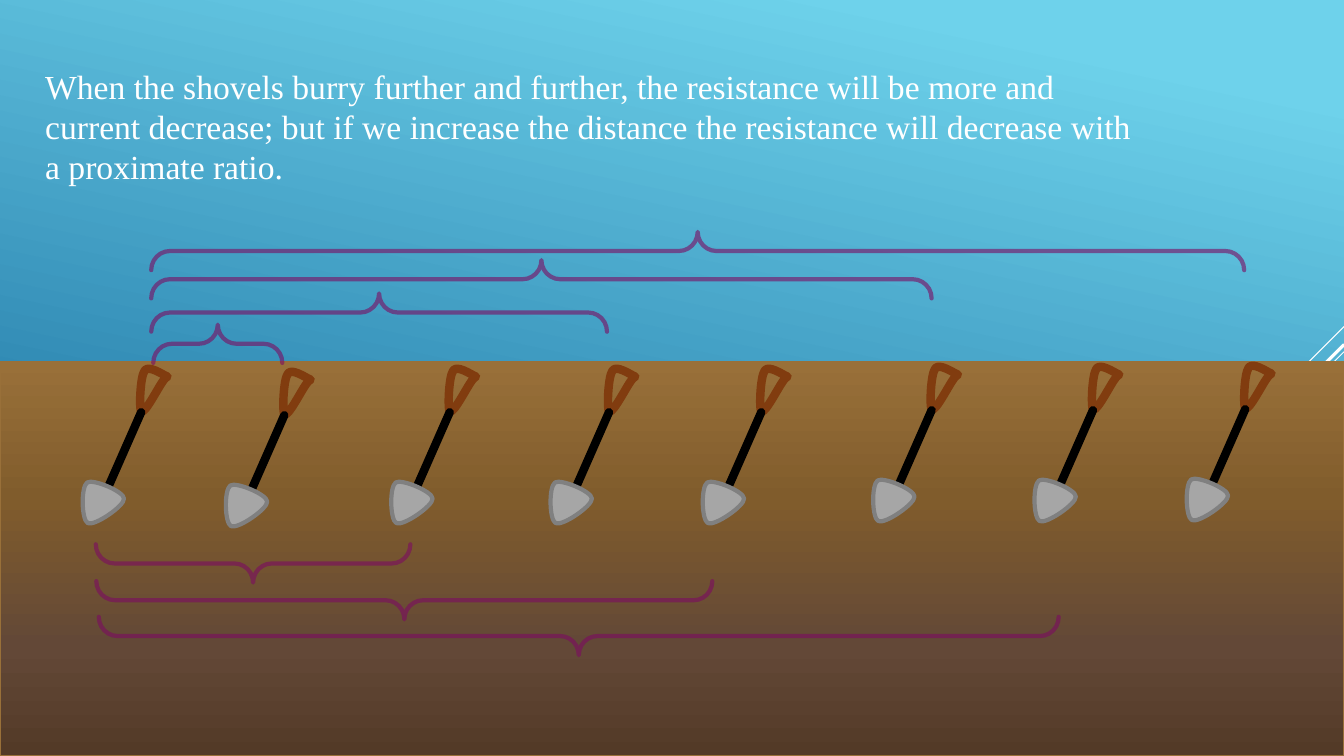
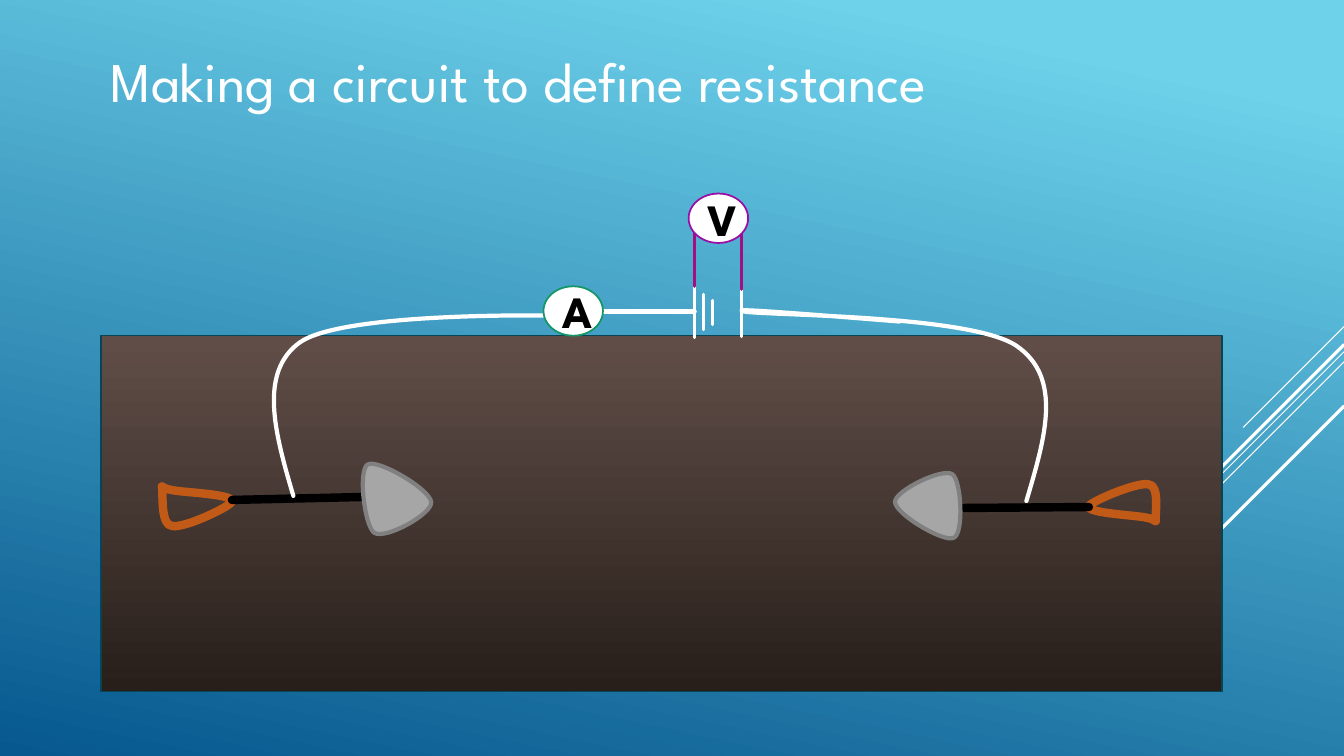
from copy import deepcopy
from dataclasses import dataclass
from itertools import chain

from lxml.etree import SubElement
from pptx import Presentation
from pptx.dml.color import RGBColor
from pptx.enum.shapes import MSO_CONNECTOR as Connector, MSO_SHAPE as Preset
from pptx.enum.text import MSO_ANCHOR as Anchor, PP_ALIGN as Align
from pptx.oxml.ns import qn
from pptx.util import Pt

PX = 9144

WHITE = RGBColor(0xFF, 0xFF, 0xFF)
BLACK = RGBColor(0x00, 0x00, 0x00)
SKY_LIGHT = RGBColor(0x6E, 0xD2, 0xEB)
SKY_DARK = RGBColor(0x06, 0x58, 0x8E)
SOIL_DEEP = RGBColor(0x53, 0x3A, 0x27)
SOIL_LOW = RGBColor(0x63, 0x48, 0x37)
SOIL_MIDDLE = RGBColor(0x80, 0x5C, 0x2C)
SOIL_TOP = RGBColor(0x99, 0x70, 0x39)
TANK_DEEP = RGBColor(0x28, 0x1F, 0x1A)
TANK_TOP = RGBColor(0x60, 0x4D, 0x48)
TANK_EDGE = RGBColor(0x07, 0x44, 0x54)
HANDLE_DARK = RGBColor(0x81, 0x3C, 0x0F)
HANDLE_LIGHT = RGBColor(0xC1, 0x5A, 0x16)
BLADE_FILL = RGBColor(0xA6, 0xA6, 0xA6)
BLADE_EDGE = RGBColor(0x80, 0x80, 0x80)
BRACE = RGBColor(0x7C, 0x0B, 0x61)
AMMETER_EDGE = RGBColor(0x14, 0x96, 0x66)
VOLTMETER_EDGE = RGBColor(0x99, 0x0E, 0xA5)
VOLTMETER_WIRE = RGBColor(0xA5, 0x0E, 0x82)

DISPLAY_FONT = "League Spartan"
BODY_FONT = "Times New Roman"

SKY_STOPS = [(10, SKY_LIGHT), (100, SKY_DARK)]
SOIL_STOPS = [(0, SOIL_DEEP), (28, SOIL_LOW), (65, SOIL_MIDDLE), (100, SOIL_TOP)]
TANK_STOPS = [(0, TANK_DEEP), (99, TANK_TOP)]

CORNER_RAYS = [(324, 100, 0.75), (349, 326, 0.75), (359, 207, 0.75),
               (342, 191, 2.25), (403, 139, 2.25)]


@dataclass
class Box:
    left: int
    top: int
    width: int
    height: int

    def emu(self):
        return [value * PX for value in (self.left, self.top, self.width, self.height)]

    def point(self, x, y):
        return self.left + x, self.top + y

    def inner(self, x, y, width, height):
        return Box(self.left + x, self.top + y, width, height)


@dataclass
class Outline:
    width: int
    height: int
    start: tuple
    curves: list


@dataclass
class ShovelPose:
    rotation: float
    handle: Box
    shaft_end: tuple
    blade: Box


HANDLE = Outline(67, 43, (19, 7), [
    [(28, 14), (69, 35), (66, 41)], [(64, 45), (12, 43), (3, 36)],
    [(-7, 31), (9, 7), (11, 2)], [(13, -3), (10, 1), (19, 7)]])
BLADE = Outline(64, 65, (26, 0), [
    [(15, 0), (-5, 49), (1, 58)], [(8, 68), (59, 67), (64, 57)],
    [(69, 46), (37, -1), (26, 0)]])
LEFT_WIRE = Outline(267, 178, (19, 179), [
    [(1, 118), (-16, 57), (25, 27)], [(66, -3), (264, 0), (267, 0)]])
RIGHT_WIRE = Outline(302, 189, (283, 189), [
    [(301, 128), (320, 67), (273, 35)], [(227, 4), (22, 5), (3, 1)],
    [(-16, -3), (70, 4), (157, 11)]])

BURIED = ShovelPose(90, Box(-9, -35, 43, 27), (-33, 75), Box(-58, 69, 41, 41))
FACING_LEFT = ShovelPose(155, Box(4, -18, 67, 43), (-129, 1), Box(-185, -29, 64, 65))
FACING_RIGHT = ShovelPose(332.5, Box(-73, -26, 68, 47), (132, -3), Box(124, -42, 65, 71))


def paint_gradient(fill, element, stops, angle):
    fill.gradient()
    fill.gradient_angle = 360 - angle
    stop_list = next(element.iter(qn("a:gsLst")))
    for _ in stops[2:]:
        stop_list.append(deepcopy(stop_list[0]))
    for stop, (position, color) in zip(fill.gradient_stops, stops):
        stop.position = position / 100
        stop.color.rgb = color


def style_line(shape, color, width, opacity=None):
    shape.line.color.rgb = color
    shape.line.width = Pt(width)
    outline = shape._element.spPr.find(qn("a:ln"))
    outline.set("cap", "rnd")
    SubElement(outline, qn("a:round"))
    if opacity:
        alpha = SubElement(next(outline.iter(qn("a:srgbClr"))), qn("a:alpha"))
        alpha.set("val", str(opacity * 1000))


def add_line(slide, start, end, color, width):
    ends = [value * PX for value in (*start, *end)]
    line = slide.shapes.add_connector(Connector.STRAIGHT, *ends)
    style_line(line, color, width)
    SubElement(line._element.spPr, qn("a:effectLst"))


def bend_segments(shape, outline, points):
    track = next(shape._element.iter(qn("a:path")))
    track.set("w", str(outline.width * PX))
    track.set("h", str(outline.height * PX))
    for node, (x, y) in zip(track.iter(qn("a:pt")), points):
        node.set("x", str(x))
        node.set("y", str(y))
    segments = track.findall(qn("a:lnTo"))
    for first in range(0, len(segments), 3):
        curve = SubElement(track, qn("a:cubicBezTo"))
        segments[first].addprevious(curve)
        for segment in segments[first:first + 3]:
            curve.append(segment[0])
            track.remove(segment)


def add_curve(slide, box, outline, color, width, rotation=0, close=False, fill=None):
    points = [(x * PX, y * PX) for x, y in (outline.start, *chain(*outline.curves))]
    builder = slide.shapes.build_freeform(*points[0])
    builder.add_line_segments(points[1:], close=close)
    shape = builder.convert_to_shape()
    bend_segments(shape, outline, points)
    shape.left, shape.top, shape.width, shape.height = box.emu()
    shape.rotation = rotation
    shape.shadow.inherit = False
    if fill is None:
        shape.fill.background()
    else:
        shape.fill.solid()
        shape.fill.fore_color.rgb = fill
    style_line(shape, color, width)


def add_run(paragraph, text, font, size, color, bold=False):
    run = paragraph.add_run()
    run.text = text
    run.font.name = font
    run.font.size = Pt(size)
    run.font.color.rgb = color
    run.font.bold = bold


def add_text(slide, box, text, font, size, spacing=None):
    frame = slide.shapes.add_textbox(*box.emu()).text_frame
    frame.word_wrap = True
    paragraph = frame.paragraphs[0]
    paragraph.line_spacing = spacing
    add_run(paragraph, text, font, size, WHITE)


def add_soil(slide, box, stops, edge):
    soil = slide.shapes.add_shape(Preset.RECTANGLE, *box.emu())
    soil.shadow.inherit = False
    paint_gradient(soil.fill, soil._element, stops, 270)
    soil.line.color.rgb = edge
    soil.line.width = Pt(1.25)


def add_shovel(slide, joint, pose, handle_color):
    spot = Box(*joint, 0, 0)
    handle, blade = (spot.inner(part.left, part.top, part.width, part.height)
                     for part in (pose.handle, pose.blade))
    add_curve(slide, handle, HANDLE, handle_color, 6, pose.rotation, close=True)
    add_line(slide, joint, spot.point(*pose.shaft_end), BLACK, 6)
    add_curve(slide, blade, BLADE, BLADE_EDGE, 3, pose.rotation, close=True,
              fill=BLADE_FILL)


def add_brace(slide, box, rotation):
    upright = Box(box.left + (box.width - box.height) // 2,
                  box.top + (box.height - box.width) // 2, box.height, box.width)
    brace = slide.shapes.add_shape(Preset.RIGHT_BRACE, *upright.emu())
    brace.rotation = rotation
    brace.adjustments[0] = 0.49
    brace.shadow.inherit = False
    brace.fill.background()
    style_line(brace, BRACE, 3, opacity=60)


def add_meter(slide, box, letter, edge):
    meter = slide.shapes.add_shape(Preset.OVAL, *box.emu())
    meter.shadow.inherit = False
    meter.fill.solid()
    meter.fill.fore_color.rgb = WHITE
    style_line(meter, edge, 1.25)
    meter.text_frame.vertical_anchor = Anchor.MIDDLE
    paragraph = meter.text_frame.paragraphs[0]
    paragraph.alignment = Align.CENTER
    add_run(paragraph, letter, DISPLAY_FONT, 32, BLACK, bold=True)


def add_sky_slide(presentation):
    slide = presentation.slides.add_slide(presentation.slide_layouts[6])
    paint_gradient(slide.background.fill, slide._element, SKY_STOPS, 102)
    for top, reach, width in CORNER_RAYS:
        add_line(slide, (1333, top), (1333 - reach, top + reach), WHITE, width)
    return slide


def add_shovel_row(slide, box):
    joints = [(140, 50), (604, 50), (755, 50), (924, 48),
              (1084, 48), (1235, 47), (282, 53), (446, 50)]
    for joint in joints:
        add_shovel(slide, box.point(*joint), BURIED, HANDLE_DARK)
    upper_braces = [(152, -37, 128), (150, -68, 452), (150, -101, 774), (150, -129, 1084)]
    lower_braces = [(95, 181, 312), (96, 218, 611), (98, 253, 952)]
    for braces, rotation in ((upper_braces, 270), (lower_braces, 90)):
        for left, top, length in braces:
            add_brace(slide, box.inner(left, top, length, 38), rotation)


def add_circuit(slide, box):
    for outline, left, top in ((LEFT_WIRE, 172, -20), (RIGHT_WIRE, 635, -25)):
        wire_box = box.inner(left, top, outline.width, outline.height)
        add_curve(slide, wire_box, outline, WHITE, 3)
    add_line(slide, box.point(498, -24), box.point(589, -24), WHITE, 3)
    uprights = [(589, -49, 2, WHITE), (598, -41, -6, WHITE), (607, -35, -11, WHITE),
                (635, -49, 1, WHITE), (589, -107, -49, VOLTMETER_WIRE),
                (635, -105, -46, VOLTMETER_WIRE)]
    for x, top, bottom, color in uprights:
        add_line(slide, box.point(x, top), box.point(x, bottom), color, 2.25)
    add_meter(slide, box.inner(439, -49, 59, 49), "A", AMMETER_EDGE)
    add_meter(slide, box.inner(583, -141, 59, 49), "V", VOLTMETER_EDGE)


def build_distance_slide(presentation):
    slide = add_sky_slide(presentation)
    add_text(slide, Box(35, 61, 1104, 131),
             "When the shovels burry further and further, the resistance will be more "
             "and current decrease; but if we increase the distance the resistance will "
             "decrease with a proximate ratio.", BODY_FONT, 24, Pt(28.6))
    ground = Box(0, 359, 1333, 391)
    add_soil(slide, ground, SOIL_STOPS, SOIL_TOP)
    add_shovel_row(slide, ground)


def build_circuit_slide(presentation):
    slide = add_sky_slide(presentation)
    tank = Box(100, 333, 1112, 353)
    add_soil(slide, tank, TANK_STOPS, TANK_EDGE)
    add_shovel(slide, tank.point(980, 170), FACING_LEFT, HANDLE_LIGHT)
    add_shovel(slide, tank.point(130, 163), FACING_RIGHT, HANDLE_LIGHT)
    add_circuit(slide, tank)
    add_text(slide, Box(100, 41, 1005, 77), "Making a circuit to define resistance",
             DISPLAY_FONT, 40)


def main():
    presentation = Presentation()
    presentation.slide_width = 1333 * PX
    presentation.slide_height = 750 * PX
    build_distance_slide(presentation)
    build_circuit_slide(presentation)
    presentation.save("out.pptx")


if __name__ == "__main__":
    main()
